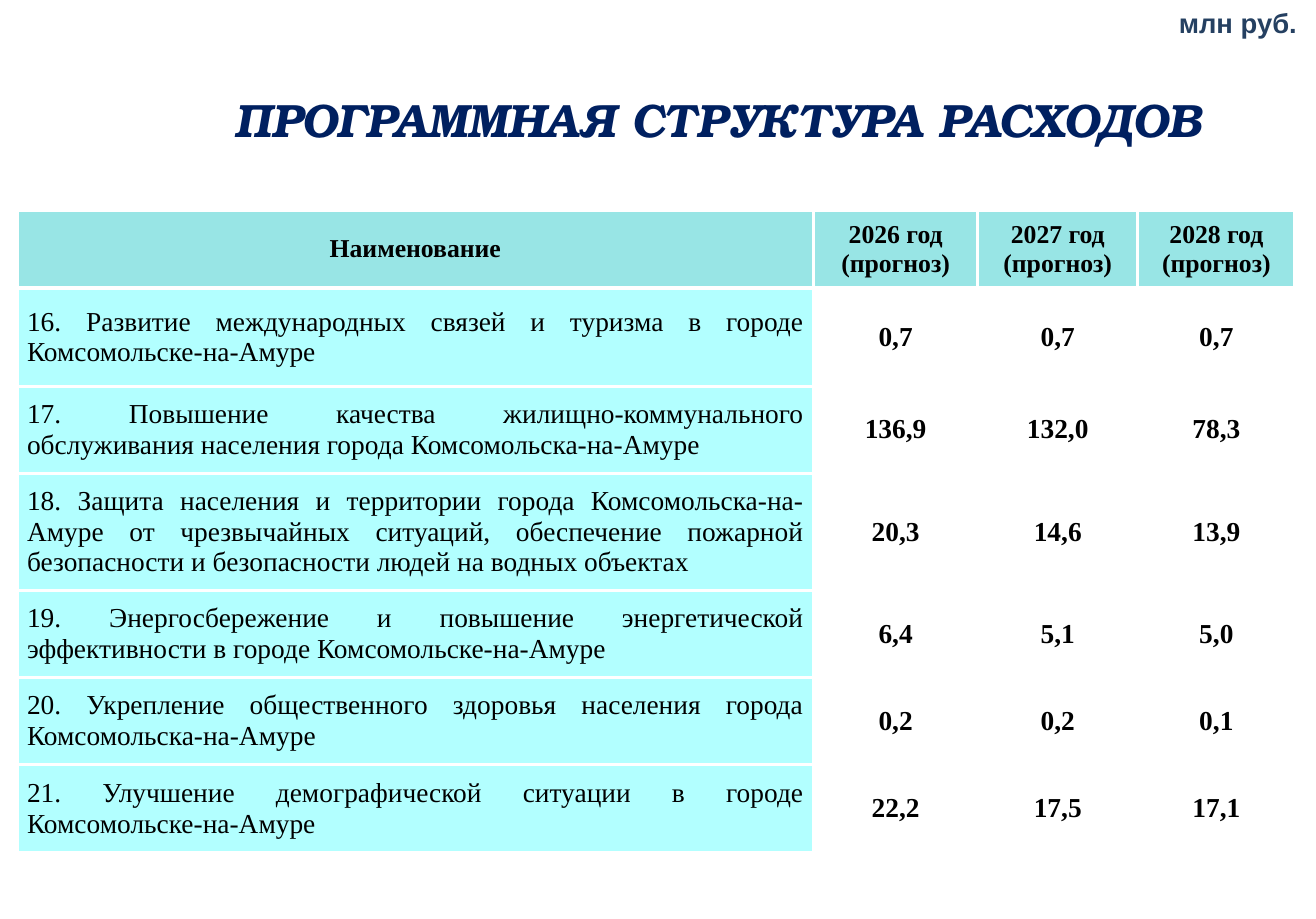
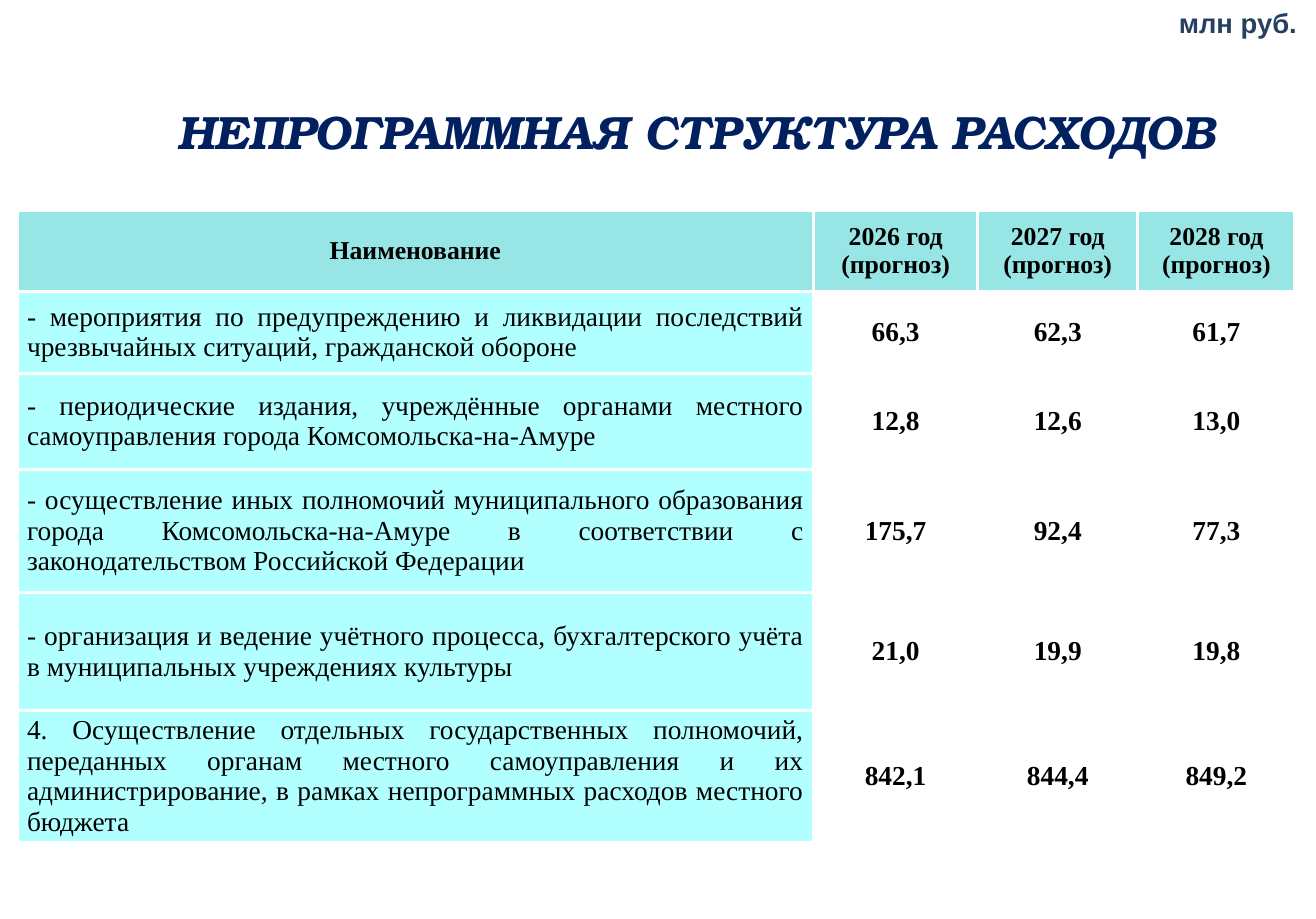
from dataclasses import dataclass

import lxml.etree
import pptx
import pptx.dml.color
import pptx.enum.text
import pptx.oxml
import pptx.oxml.ns
import pptx.util

EMU_PER_PX = 7896
ALIGN = pptx.enum.text.PP_ALIGN
ANCHOR = pptx.enum.text.MSO_ANCHOR


@dataclass(frozen=True)
class Theme:
    title_color: str = "002060"
    title_glow: str = "66FFFF"
    unit_color: str = "254061"
    text_color: str = "000000"
    header_fill: str = "33CCCC"
    name_fill: str = "66FFFF"
    border_color: str = "FFFFFF"
    fill_opacity: int = 50
    border_width: float = 2.25
    title_font: str = "TeX Gyre Bonum"
    unit_font: str = "Arial"
    table_font: str = "Times New Roman"
    title_size: int = 29
    header_size: int = 16
    body_size: int = 17


def px(length):
    return pptx.util.Emu(length * EMU_PER_PX)


def rgb(value):
    return pptx.dml.color.RGBColor.from_string(value)


def add_element(parent, tag, **attributes):
    element = lxml.etree.SubElement(parent, pptx.oxml.ns.qn(tag))
    for name, value in attributes.items():
        element.set(name, str(value))
    return element


class Deck:
    COLUMNS = (796, 164, 160, 157)
    HEADERS = ("Наименование", "2026 год (прогноз)", "2027 год (прогноз)", "2028 год (прогноз)")

    def __init__(self, theme):
        self.theme = theme
        self.presentation = pptx.Presentation()
        self.presentation.slide_width = px(1315)
        self.presentation.slide_height = px(918)
        self.slide = None

    def add_slide(self):
        self.slide = self.presentation.slides.add_slide(self.presentation.slide_layouts[6])

    def format_text(self, text_frame, font, size, color, align, bold=True, italic=False):
        for paragraph in text_frame.paragraphs:
            paragraph.alignment = align
            for run in paragraph.runs:
                run.font.name = font
                run.font.size = pptx.util.Pt(size)
                run.font.bold = bold
                run.font.italic = italic
                run.font.color.rgb = rgb(color)

    def add_textbox(self, text, box, inset_x, inset_y, wrap):
        shape = self.slide.shapes.add_textbox(*map(px, box))
        text_frame = shape.text_frame
        text_frame.margin_left = text_frame.margin_right = px(inset_x)
        text_frame.margin_top = text_frame.margin_bottom = px(inset_y)
        text_frame.word_wrap = wrap
        text_frame.text = text
        return text_frame

    def add_title(self, text, box):
        theme = self.theme
        text_frame = self.add_textbox(text, box, 14, 14, True)
        text_frame.vertical_anchor = ANCHOR.BOTTOM
        self.format_text(text_frame, theme.title_font, theme.title_size,
                         theme.title_color, ALIGN.CENTER, italic=True)
        properties = text_frame.paragraphs[0].runs[0].font._element
        effects = pptx.oxml.parse_xml(f"<a:effectLst {pptx.oxml.ns.nsdecls('a')}/>")
        shadow = add_element(effects, "a:outerShdw", blurRad=50800, dist=38100, dir=2700000)
        add_element(shadow, "a:srgbClr", val=theme.title_glow)
        properties.find(pptx.oxml.ns.qn("a:solidFill")).addnext(effects)

    def add_unit(self, text):
        theme = self.theme
        text_frame = self.add_textbox(text, (1164, -1, 148, 47), 14, 7, False)
        text_frame.auto_size = pptx.enum.text.MSO_AUTO_SIZE.SHAPE_TO_FIT_TEXT
        self.format_text(text_frame, theme.unit_font, theme.body_size,
                         theme.unit_color, ALIGN.LEFT)

    def style_cell(self, cell, text, size, align, fill, bold=True, insets=(13, 8)):
        theme = self.theme
        cell.text_frame.text = text
        cell.vertical_anchor = ANCHOR.MIDDLE
        cell.margin_left = cell.margin_right = px(insets[0])
        cell.margin_top = cell.margin_bottom = px(insets[1])
        self.format_text(cell.text_frame, theme.table_font, size, theme.text_color, align, bold)
        properties = cell._tc.get_or_add_tcPr()
        for side in ("L", "R", "T", "B"):
            line = add_element(properties, f"a:ln{side}", w=pptx.util.Pt(theme.border_width))
            add_element(add_element(line, "a:solidFill"), "a:srgbClr", val=theme.border_color)
        if fill:
            cell.fill.solid()
            cell.fill.fore_color.rgb = rgb(fill)
            color = properties.find(pptx.oxml.ns.qn("a:solidFill"))[0]
            add_element(color, "a:alpha", val=theme.fill_opacity * 1000)
        else:
            cell.fill.background()

    def add_budget_table(self, header_height, rows):
        theme = self.theme
        heights = [header_height] + [row[0] for row in rows]
        table = self.slide.shapes.add_table(
            len(heights), len(self.COLUMNS), px(17), px(210),
            px(sum(self.COLUMNS)), px(sum(heights))).table
        table.first_row = table.horz_banding = False
        for column, width in zip(table.columns, self.COLUMNS):
            column.width = px(width)
        for row, height in zip(table.rows, heights):
            row.height = px(height)
        for cell, text in zip(table.rows[0].cells, self.HEADERS):
            self.style_cell(cell, text, theme.header_size, ALIGN.CENTER, theme.header_fill)
        for index, (height, name, *values) in enumerate(rows, 1):
            self.style_cell(table.cell(index, 0), name, theme.body_size, ALIGN.JUSTIFY,
                            theme.name_fill, bold=False, insets=(10, 0))
            for column, value in enumerate(values, 1):
                self.style_cell(table.cell(index, column), value, theme.body_size,
                                ALIGN.CENTER, None)


PROGRAMS = [
    (98, "16. Развитие международных связей и туризма в городе\vКомсомольске-на-Амуре",
     "0,7", "0,7", "0,7"),
    (87, "17. Повышение качества жилищно-коммунального\v"
         "обслуживания населения города Комсомольска-на-Амуре", "136,9", "132,0", "78,3"),
    (117, "18. Защита населения и территории города Комсомольска-на-Амуре от чрезвычайных "
          "ситуаций, обеспечение пожарной безопасности и безопасности людей на водных объектах",
     "20,3", "14,6", "13,9"),
    (87, "19. Энергосбережение и повышение энергетической\v"
         "эффективности в городе Комсомольске-на-Амуре", "6,4", "5,1", "5,0"),
    (87, "20. Укрепление общественного здоровья населения города\vКомсомольска-на-Амуре",
     "0,2", "0,2", "0,1"),
    (88, "21. Улучшение демографической ситуации в городе\vКомсомольске-на-Амуре",
     "22,2", "17,5", "17,1"),
]

OTHER_EXPENSES = [
    (82, "- мероприятия по предупреждению и ликвидации последствий чрезвычайных ситуаций, "
         "гражданской обороне", "66,3", "62,3", "61,7"),
    (96, "- периодические издания, учреждённые органами местного самоуправления города "
         "Комсомольска-на-Амуре", "12,8", "12,6", "13,0"),
    (123, "- осуществление иных полномочий муниципального образования города "
          "Комсомольска-на-Амуре в соответствии с законодательством Российской Федерации",
     "175,7", "92,4", "77,3"),
    (118, "- организация и ведение учётного процесса, бухгалтерского учёта в муниципальных "
          "учреждениях культуры", "21,0", "19,9", "19,8"),
    (121, "4. Осуществление отдельных государственных полномочий, переданных органам местного "
          "самоуправления и их администрирование, в рамках непрограммных расходов местного "
          "бюджета", "842,1", "844,4", "849,2"),
]

SLIDES = [
    ("ПРОГРАММНАЯ СТРУКТУРА РАСХОДОВ", (178, 43, 1080, 118), 74, PROGRAMS),
    ("НЕПРОГРАММНАЯ СТРУКТУРА РАСХОДОВ", (110, 43, 1172, 130), 81, OTHER_EXPENSES),
]


def main():
    deck = Deck(Theme())
    for title, title_box, header_height, rows in SLIDES:
        deck.add_slide()
        deck.add_title(title, title_box)
        deck.add_budget_table(header_height, rows)
        deck.add_unit("млн руб.")
    deck.presentation.save("out.pptx")


if __name__ == "__main__":
    main()
